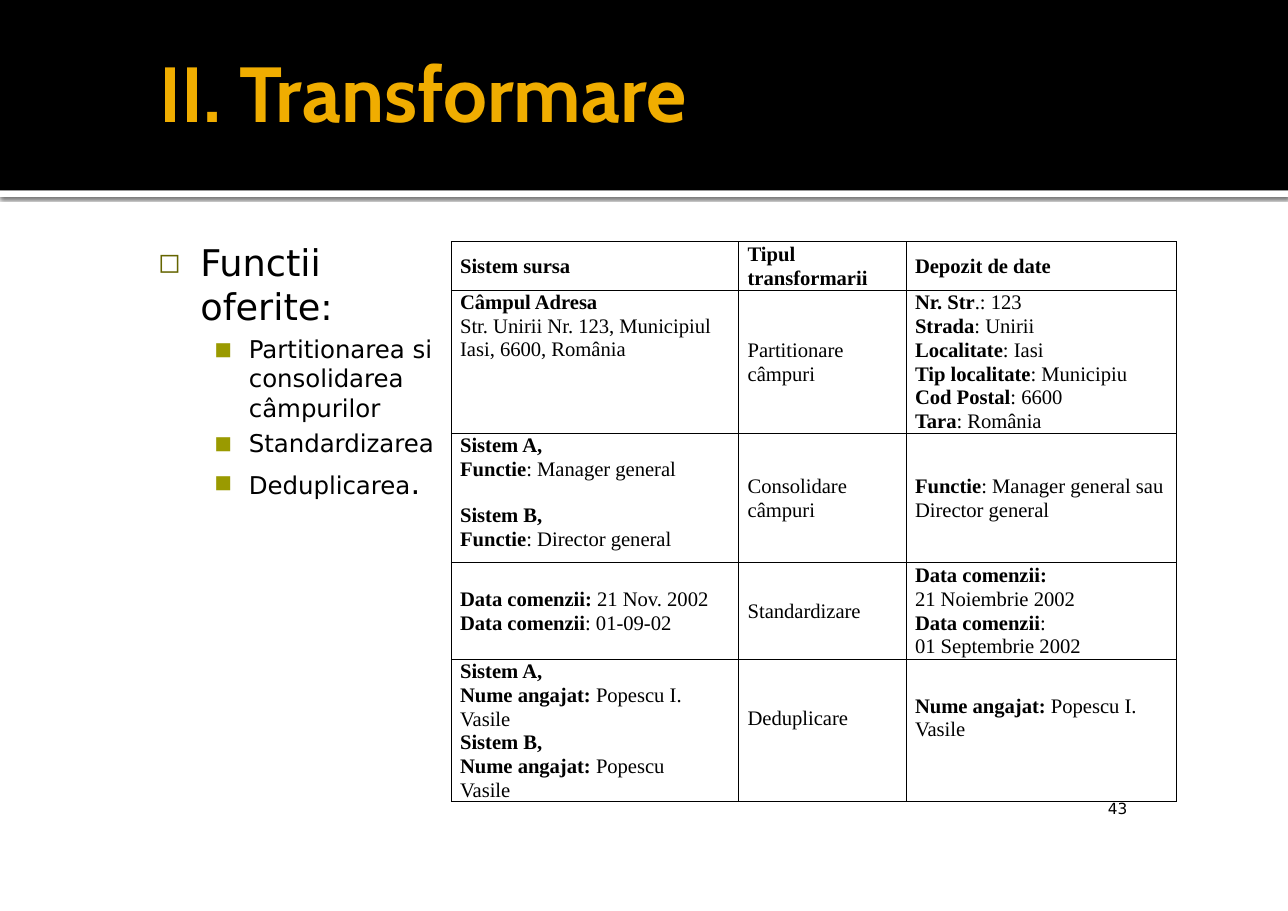
from dataclasses import dataclass

from lxml import etree
from pptx import Presentation
from pptx.dml.color import RGBColor
from pptx.enum import shapes, text
from pptx.oxml import parse_xml
from pptx.oxml.ns import nsdecls, qn
from pptx.util import Cm, Pt


@dataclass(frozen=True)
class Theme:
    ink: str = "000000"
    paper: str = "FFFFFF"
    gold: str = "F0AD00"
    olive: str = "656500"
    lime: str = "9A9A00"
    head: str = "Cabin"
    body: str = "DejaVu Sans"
    serif: str = "Times New Roman"
    title: float = 51
    lead: float = 24
    dot: float = 20
    item: float = 16
    cell: float = 13.5
    note: float = 10
    line: float = 15.5
    rule: float = 0.75


class Deck:
    def __init__(self, theme):
        self.theme = theme
        self.prs = Presentation()
        self.prs.slide_width, self.prs.slide_height = Cm(29.7), Cm(21)
        self.slide = self.prs.slides.add_slide(self.prs.slide_layouts[5])

    def run(self, para, words, size, font, color=None, bold=False):
        run = para.add_run()
        run.text = words
        run.font.size, run.font.name, run.font.bold = Pt(size), font, bold
        run.font.color.rgb = RGBColor.from_string(color or self.theme.ink)

    def frame(self, shape, wrap=True):
        """Strip the margins of a text shape and return its text frame."""
        frame = shape.text_frame
        frame.margin_left = frame.margin_right = 0
        frame.margin_top = frame.margin_bottom = 0
        frame.word_wrap = wrap
        return frame

    def band(self, top, height, color, shade=False):
        box = self.slide.shapes.add_shape(
            shapes.MSO_SHAPE.RECTANGLE, 0, Cm(top), self.prs.slide_width, Cm(height))
        box.shadow.inherit = False
        box.fill.solid()
        box.fill.fore_color.rgb = RGBColor.from_string(color)
        box.line.fill.background()
        if shade:
            glow = box._element.spPr.find(qn("a:effectLst"))
            glow.append(parse_xml(
                f'<a:outerShdw {nsdecls("a")} blurRad="{Pt(2.5)}" dist="{Pt(0.8)}" '
                f'dir="5400000"><a:srgbClr val="{self.theme.ink}">'
                '<a:alpha val="60000"/></a:srgbClr></a:outerShdw>'))

    def title(self, words, left, top, width, height):
        t = self.theme
        box = self.slide.shapes.title
        self.slide.shapes._spTree.append(box._element)  # in front of the bands
        box.left, box.top, box.width, box.height = Cm(left), Cm(top), Cm(width), Cm(height)
        frame = self.frame(box)
        frame.vertical_anchor = text.MSO_ANCHOR.MIDDLE
        para = frame.paragraphs[0]
        para.alignment = text.PP_ALIGN.LEFT
        self.run(para, words, t.title, t.head, t.gold, True)

    def box(self, left, top, width, height, wrap=True):
        box = self.slide.shapes.add_textbox(Cm(left), Cm(top), Cm(width), Cm(height))
        return self.frame(box, wrap)

    def bullet(self, para, mark, color, left, hang):
        props = para._p.get_or_add_pPr()
        props.set("marL", str(Cm(left)))
        props.set("indent", str(-Cm(hang)))
        tint = etree.SubElement(props, qn("a:buClr"))
        etree.SubElement(tint, qn("a:srgbClr"), val=color)
        etree.SubElement(props, qn("a:buSzPct"), val="75000")
        etree.SubElement(props, qn("a:buFont"), typeface=self.theme.body)
        etree.SubElement(props, qn("a:buChar"), char=mark)

    def list(self, lead, items, *place):
        t = self.theme
        frame = self.box(*place)
        para = frame.paragraphs[0]
        self.bullet(para, "◻", t.olive, 0.99, 0.97)
        self.run(para, lead, t.lead, t.body)
        for item in items:
            para = frame.add_paragraph()
            para.level = 1
            self.bullet(para, "■", t.lime, 2.11, 0.79)
            para.space_before = Pt(3.9)
            words = item.rstrip(".")
            self.run(para, words, t.item, t.body)
            if words != item:
                self.run(para, ".", t.dot, t.body)

    def fill(self, cell, words):
        """Write marked text: *bold*, and a blank line opens a gap."""
        t = self.theme
        frame = cell.text_frame
        para = None
        for block in words.split("\n\n"):
            for i, line in enumerate(block.split("\n")):
                gap = para is not None and i == 0
                para = frame.add_paragraph() if para is not None else frame.paragraphs[0]
                para.line_spacing = Pt(t.line)
                if gap:
                    para.space_before = Pt(14.5)
                for k, part in enumerate(line.split("*")):
                    if part:
                        self.run(para, part, t.cell, t.serif, bold=k % 2 == 1)

    def edge(self, cell):
        props = cell._tc.get_or_add_tcPr()
        for side in ("lnL", "lnR", "lnT", "lnB"):
            line = etree.SubElement(props, qn(f"a:{side}"), w=str(Pt(self.theme.rule)))
            tint = etree.SubElement(line, qn("a:solidFill"))
            etree.SubElement(tint, qn("a:srgbClr"), val=self.theme.ink)
        cell.fill.background()

    def table(self, rows, left, top, widths, heights):
        grid = self.slide.shapes.add_table(
            len(rows), len(widths), Cm(left), Cm(top),
            Cm(sum(widths)), Cm(sum(heights))).table
        grid.first_row = grid.horz_banding = False
        for col, width in zip(grid.columns, widths):
            col.width = Cm(width)
        for row, height, words in zip(grid.rows, heights, rows):
            row.height = Cm(height)
            for cell, part in zip(row.cells, words):
                cell.margin_left = Cm(0.2)
                cell.margin_right = cell.margin_top = cell.margin_bottom = 0
                cell.vertical_anchor = text.MSO_ANCHOR.MIDDLE
                self.edge(cell)
                self.fill(cell, part)
        return grid

    def number(self, words, *place):
        para = self.box(*place, wrap=False).paragraphs[0]
        self.run(para, words, self.theme.note, self.theme.body)


ROWS = [
    ("*Sistem sursa*", "*Tipul transformarii*", "*Depozit de date*"),
    ("*Câmpul Adresa*\nStr. Unirii Nr. 123, Municipiul Iasi, 6600, România",
     "Partitionare câmpuri",
     "*Nr. Str*.: 123\n*Strada*: Unirii\n*Localitate*: Iasi\n"
     "*Tip localitate*: Municipiu\n*Cod Postal*: 6600\n*Tara*: România"),
    ("*Sistem A,*\n*Functie*: Manager general\n\n"
     "*Sistem B,*\n*Functie*: Director general",
     "Consolidare câmpuri",
     "*Functie*: Manager general sau Director general"),
    ("*Data comenzii: *21 Nov. 2002\n*Data comenzii*: 01-09-02",
     "Standardizare",
     "*Data comenzii:*\n21 Noiembrie 2002\n*Data comenzii*:\n01 Septembrie 2002"),
    ("*Sistem A,*\n*Nume angajat: *Popescu I. Vasile\n"
     "*Sistem B,*\n*Nume angajat: *Popescu Vasile",
     "Deduplicare",
     "*Nume angajat: *Popescu I. Vasile"),
]


def main():
    theme = Theme()
    deck = Deck(theme)
    deck.band(4.39, 0.15, theme.paper, shade=True)
    deck.band(0, 4.39, theme.ink)
    deck.number("43", 25.55, 18.42, 0.51, 0.51)
    deck.title("II. Transformare", 3.68, 0.99, 20.96, 2.21)
    deck.list("Functii oferite:",
              ["Partitionarea si consolidarea câmpurilor", "Standardizarea", "Deduplicarea."],
              3.63, 5.53, 6.43, 6.1)
    grid = deck.table(ROWS, 10.41, 5.57, [6.63, 3.86, 6.22], [1.12, 3.3, 2.97, 2.24, 3.28])
    for row in (1, 2):
        grid.cell(row, 0).vertical_anchor = text.MSO_ANCHOR.TOP
    grid.cell(4, 0).margin_right = Cm(0.9)
    for col in (1, 2):
        grid.cell(4, col).margin_bottom = Cm(0.6)
    deck.prs.save("out.pptx")


if __name__ == "__main__":
    main()
